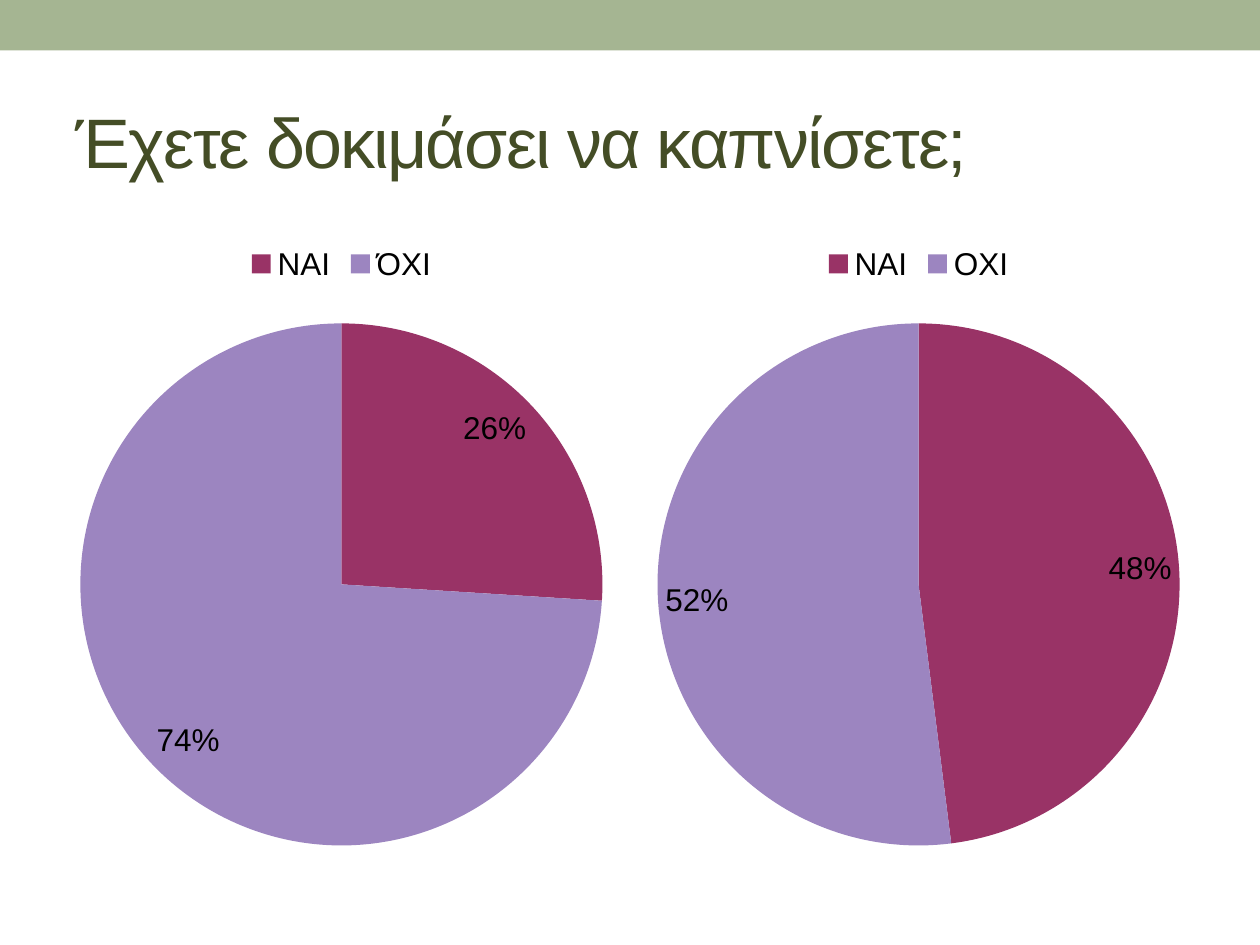
"""Build a slide with two pie charts on whether people have tried smoking."""
import pptx
import pptx.chart.data
import pptx.dml.color
import pptx.enum.chart
import pptx.enum.shapes
import pptx.enum.text
import pptx.util

Cm = pptx.util.Cm
Pt = pptx.util.Pt
RGB = pptx.dml.color.RGBColor.from_string

QUESTION = "Έχετε δοκιμάσει να καπνίσετε;"
SURVEYS = [
    {"ΝΑΙ": 26, "ΌΧΙ": 74},
    {"NAI": 48, "OXI": 52},
]

THEME = {
    "font": "Arial",
    "title_size": 40,
    "title_spacing": -100,
    "chart_size": 18,
    "band": "A5B592",
    "title": "444D26",
    "text": "000000",
    "slices": ["993366", "9C85C0"],
}

SLIDE_WIDTH, SLIDE_HEIGHT = 25.4, 19.05
MARGIN, GAP = 1.27, 0.41
BAND_HEIGHT = 1.02
TITLE_TOP, TITLE_HEIGHT = 1.47, 2.74
CHART_TOP, CHART_HEIGHT = 4.65, 13.11
CONTENT_WIDTH = SLIDE_WIDTH - 2 * MARGIN


def apply(target, formats):
    for name, value in formats.items():
        setattr(target, name, value)


def style_font(font, size, color):
    apply(font, {"name": THEME["font"], "size": Pt(size), "bold": False})
    font.color.rgb = RGB(color)


def add_band(slide):
    band = slide.shapes.add_shape(
        pptx.enum.shapes.MSO_SHAPE.RECTANGLE, 0, 0, Cm(SLIDE_WIDTH), Cm(BAND_HEIGHT)
    )
    band.shadow.inherit = False
    band.fill.solid()
    band.fill.fore_color.rgb = RGB(THEME["band"])
    band.line.fill.background()


def add_title(slide):
    title = slide.shapes.title
    apply(title, {
        "left": Cm(MARGIN), "top": Cm(TITLE_TOP),
        "width": Cm(CONTENT_WIDTH), "height": Cm(TITLE_HEIGHT),
    })
    apply(title.text_frame, {
        "text": QUESTION,
        "word_wrap": True,
        "auto_size": pptx.enum.text.MSO_AUTO_SIZE.NONE,
        "vertical_anchor": pptx.enum.text.MSO_ANCHOR.MIDDLE,
    })
    paragraph = title.text_frame.paragraphs[0]
    paragraph.alignment = pptx.enum.text.PP_ALIGN.LEFT
    question = paragraph.runs[0]
    style_font(question.font, THEME["title_size"], THEME["title"])
    question.font._element.set("spc", str(THEME["title_spacing"]))


def add_pie(slide, survey, left, width):
    answers = pptx.chart.data.CategoryChartData()
    answers.categories = list(survey)
    answers.add_series("Series 1", list(survey.values()))
    pie = slide.shapes.add_chart(
        pptx.enum.chart.XL_CHART_TYPE.PIE,
        Cm(left), Cm(CHART_TOP), Cm(width), Cm(CHART_HEIGHT), answers,
    ).chart
    apply(pie, {"has_title": False, "has_legend": True})
    style_font(pie.font, THEME["chart_size"], THEME["text"])
    apply(pie.legend, {
        "position": pptx.enum.chart.XL_LEGEND_POSITION.TOP,
        "include_in_layout": False,
    })
    plot = pie.plots[0]
    apply(plot, {"vary_by_categories": True, "has_data_labels": True})
    apply(plot.data_labels, {
        "show_percentage": True,
        "show_value": False,
        "number_format": "0%",
        "number_format_is_linked": False,
        "position": pptx.enum.chart.XL_LABEL_POSITION.INSIDE_END,
    })
    for index, color in enumerate(THEME["slices"]):
        piece = plot.series[0].points[index].format
        piece.fill.solid()
        piece.fill.fore_color.rgb = RGB(color)
        piece.line.fill.background()


def main():
    deck = pptx.Presentation()
    apply(deck, {"slide_width": Cm(SLIDE_WIDTH), "slide_height": Cm(SLIDE_HEIGHT)})
    slide = deck.slides.add_slide(deck.slide_layouts.get_by_name("Title Only"))
    add_band(slide)
    add_title(slide)
    width = (CONTENT_WIDTH - GAP * (len(SURVEYS) - 1)) / len(SURVEYS)
    for column, survey in enumerate(SURVEYS):
        add_pie(slide, survey, MARGIN + column * (width + GAP), width)
    deck.save("out.pptx")


if __name__ == "__main__":
    main()
